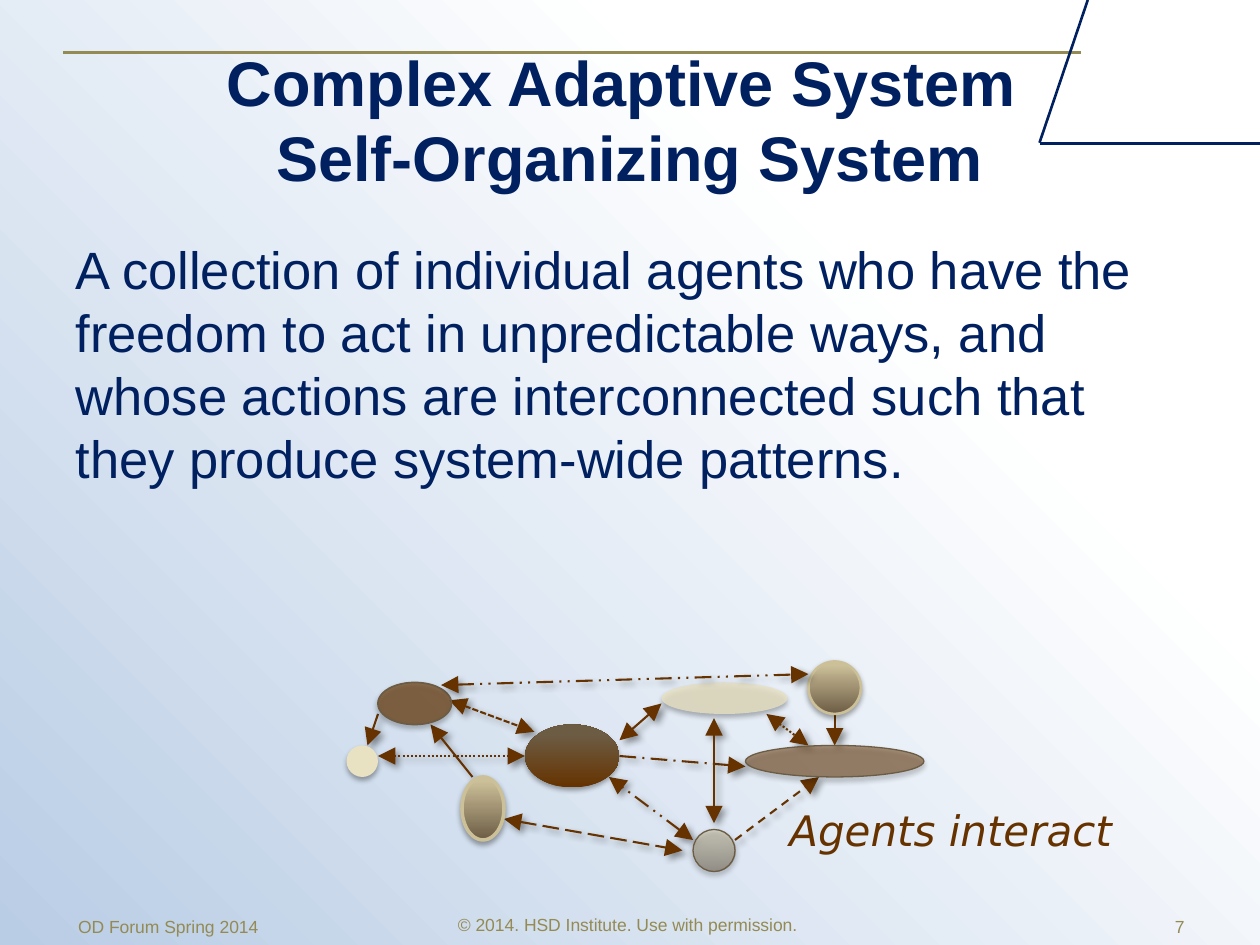
from pptx import Presentation
from pptx.dml.color import RGBColor
from pptx.enum.dml import MSO_LINE
from pptx.enum.shapes import MSO_CONNECTOR, MSO_SHAPE
from pptx.enum.text import MSO_ANCHOR, MSO_AUTO_SIZE, PP_ALIGN
from pptx.oxml import parse_xml
from pptx.oxml.ns import nsdecls, qn
from pptx.oxml.xmlchemy import OxmlElement
from pptx.util import Inches, Pt

NAVY = RGBColor(0x00, 0x20, 0x60)
OLIVE = RGBColor(0x94, 0x8A, 0x54)
BROWN = RGBColor(0x66, 0x33, 0x00)
UMBER = RGBColor(0x6C, 0x5C, 0x44)
SAND = RGBColor(0xCC, 0xC0, 0x99)
CREAM = RGBColor(0xE8, 0xE1, 0xC2)
MIST = RGBColor(0xE1, 0xE8, 0xF5)
WHITE = RGBColor(0xFF, 0xFF, 0xFF)
SKY = RGBColor(0xB9, 0xCD, 0xE5)
BLACK = RGBColor(0x00, 0x00, 0x00)

CELL = Inches(1) // 12  # the slide is 120 columns by 90 rows
LINK_SHADOW = (40, 4, 3, 45)  # opacity %, blur pt, distance pt, angle
AGENT_SHADOW = (35, 3.1, 1.8, 90)


def grid(*cells):
    return [round(cell * CELL) for cell in cells]


def color_xml(color, opacity=100):
    return (f'<a:srgbClr val="{color}"><a:alpha val="{opacity * 1000}"/>'
            '</a:srgbClr>')


def set_gradient(holder, stops, angle):
    """Swap the solid fill in holder for stops of (position, color[, opacity])."""
    stop_list = "".join(f'<a:gs pos="{position * 1000}">{color_xml(*paint)}</a:gs>'
                        for position, *paint in stops)
    gradient = parse_xml(
        f'<a:gradFill {nsdecls("a")} rotWithShape="1"><a:gsLst>{stop_list}</a:gsLst>'
        f'<a:lin ang="{angle * 60000}" scaled="0"/></a:gradFill>')
    holder.replace(holder.find(qn("a:solidFill")), gradient)


def set_effects(item, shadow=None):
    """Give item the one shadow described, or none at all."""
    effect = ""
    if shadow:
        opacity, blur, distance, angle = shadow
        effect = (f'<a:outerShdw blurRad="{Pt(blur)}" dist="{Pt(distance)}" '
                  f'dir="{angle * 60000}" rotWithShape="0">'
                  f'{color_xml(BLACK, opacity)}</a:outerShdw>')
    item.element.spPr.append(
        parse_xml(f'<a:effectLst {nsdecls("a")}>{effect}</a:effectLst>'))


def write(frame, text, size=10, color=OLIVE, font="Arial", bold=False, italic=False,
          align=PP_ALIGN.LEFT, anchor=MSO_ANCHOR.TOP):
    frame.word_wrap = True
    frame.auto_size = MSO_AUTO_SIZE.NONE
    frame.vertical_anchor = anchor
    frame.text = text
    line = frame.paragraphs[0]
    line.alignment = align
    line.space_before = Pt(0)
    for run in line.runs:
        run.font.name, run.font.size = font, Pt(size)
        run.font.bold, run.font.italic = bold, italic
        run.font.color.rgb = color


class SlideBuilder:
    def __init__(self, deck):
        self.slide = deck.slides.add_slide(deck.slide_layouts[1])
        self.shapes = self.slide.shapes

    def background(self, stops, angle):
        self.slide.background.fill.solid()
        set_gradient(self.slide.element.find(".//" + qn("p:bgPr")), stops, angle)

    def placeholder(self, index, box, text, **style):
        holder = self.slide.placeholders[index]
        holder.left, holder.top, holder.width, holder.height = grid(*box)
        write(holder.text_frame, text, **style)
        if index:
            layout = holder.text_frame.paragraphs[0]._p.get_or_add_pPr()
            layout.set("marL", "0")
            layout.set("indent", "0")
            layout.append(OxmlElement("a:buNone"))

    def text(self, box, text, **style):
        write(self.shapes.add_textbox(*grid(*box)).text_frame, text, **style)

    def rule(self, ends, color, width):
        line = self.shapes.add_connector(MSO_CONNECTOR.STRAIGHT, *grid(*ends))
        line.line.color.rgb = color
        line.line.width = Pt(width)
        return line

    def link(self, ends, dash=MSO_LINE.SOLID, both=True):
        """Draw an interaction between agents, with an arrow at one or both ends."""
        arrow = self.rule(ends, BROWN, 1.2)
        arrow.line.dash_style = dash
        for tag in ("a:headEnd", "a:tailEnd") if both else ("a:tailEnd",):
            tip = OxmlElement(tag)
            for key, value in (("type", "triangle"), ("w", "lg"), ("len", "lg")):
                tip.set(key, value)
            arrow.line._get_or_add_ln().append(tip)
        set_effects(arrow, LINK_SHADOW)

    def agent(self, box, fill, outline=None):
        """Draw an oval; fill is (color, opacity) or a list of gradient stops."""
        oval = self.shapes.add_shape(MSO_SHAPE.OVAL, *grid(*box))
        oval.fill.solid()
        if isinstance(fill, list):
            set_gradient(oval.element.spPr, fill, 270)
        else:
            color, opacity = fill
            oval.fill.fore_color.rgb = color
            alpha = OxmlElement("a:alpha")
            alpha.set("val", str(opacity * 1000))
            oval.element.spPr.find(".//" + qn("a:srgbClr")).append(alpha)
        if outline:
            color, width = outline
            oval.line.color.rgb = color
            oval.line.width = Pt(width)
        else:
            oval.line.fill.background()
        set_effects(oval, AGENT_SHADOW)


def main():
    deck = Presentation()
    deck.slide_width, deck.slide_height = grid(120, 90)
    page = SlideBuilder(deck)
    page.background([(0, WHITE), (29, WHITE), (100, SKY)], 135)

    for ends, color, width in [((6, 5, 103, 5), OLIVE, 2.25),
                               ((103.6, 0, 99, 13.6), NAVY, 1.5),
                               ((120, 13.7, 99, 13.7), NAVY, 1.5)]:
        set_effects(page.rule(ends, color, width))

    page.placeholder(0, (0, 3.6, 120, 15.4),
                     "Complex Adaptive System \vSelf-Organizing System",
                     size=36, color=NAVY, bold=True, align=PP_ALIGN.CENTER,
                     anchor=MSO_ANCHOR.MIDDLE)
    page.placeholder(1, (6, 22, 107, 26),
                     "A collection of individual agents who have the freedom to act in "
                     "unpredictable ways, and whose actions are interconnected such that "
                     "they produce system-wide patterns.",
                     size=30, color=NAVY)

    for ends in [(45, 74, 41, 69), (36, 68, 35, 71), (79.5, 68, 79.5, 71)]:
        page.link(ends, both=False)
    page.link((59, 72, 71, 73), MSO_LINE.LONG_DASH_DOT, both=False)
    page.link((70, 80, 78, 74), MSO_LINE.DASH, both=False)
    for ends, dash in [((48, 78, 65, 81), MSO_LINE.LONG_DASH),
                       ((73, 68, 77, 71), MSO_LINE.ROUND_DOT),
                       ((42.8, 66.7, 50.9, 69.7), MSO_LINE.SQUARE_DOT),
                       ((68, 78.4, 68, 68.4), MSO_LINE.SOLID),
                       ((59, 70.5, 63, 67), MSO_LINE.SOLID),
                       ((66, 80, 58, 74), MSO_LINE.DASH_DOT_DOT),
                       ((36, 72, 50, 72), MSO_LINE.ROUND_DOT)]:
        page.link(ends, dash)

    page.text((74, 76, 37, 9), "Agents interact", size=24, color=BROWN,
              font="DejaVu Sans", italic=True)

    bronze = [(0, UMBER), (94, SAND)]
    chestnut = [(0, BROWN), (84, UMBER)]
    pewter = [(0, UMBER, 50), (94, SAND, 50), (100, MIST)]
    for box, fill, outline in [((33, 71, 3, 3), (CREAM, 100), None),
                               ((36, 65, 7, 4), (BROWN, 65), (UMBER, 1)),
                               ((44, 74, 4, 6), bronze, (SAND, 2)),
                               ((50, 69, 9, 6), chestnut, None),
                               ((63, 65, 12, 3), (CREAM, 80), None),
                               ((71, 71, 17, 3), (BROWN, 50), (UMBER, 0.75)),
                               ((66, 79, 4, 4), pewter, (UMBER, 0.75)),
                               ((77, 63, 5, 5), bronze, (SAND, 1.5))]:
        page.agent(box, fill, outline)
    page.link((42, 65.25, 77, 64.2), MSO_LINE.DASH_DOT_DOT)

    for box, label, align in [
            ((6.25, 86.25, 29.75, 3.9), "OD Forum Spring 2014", PP_ALIGN.LEFT),
            ((0, 86, 120, 4), "© 2014. HSD Institute. Use with permission. ",
             PP_ALIGN.CENTER),
            ((84.25, 86.25, 29.75, 3.9), "7", PP_ALIGN.RIGHT)]:
        page.text(box, label, align=align, anchor=MSO_ANCHOR.MIDDLE)

    deck.save("out.pptx")


if __name__ == "__main__":
    main()
